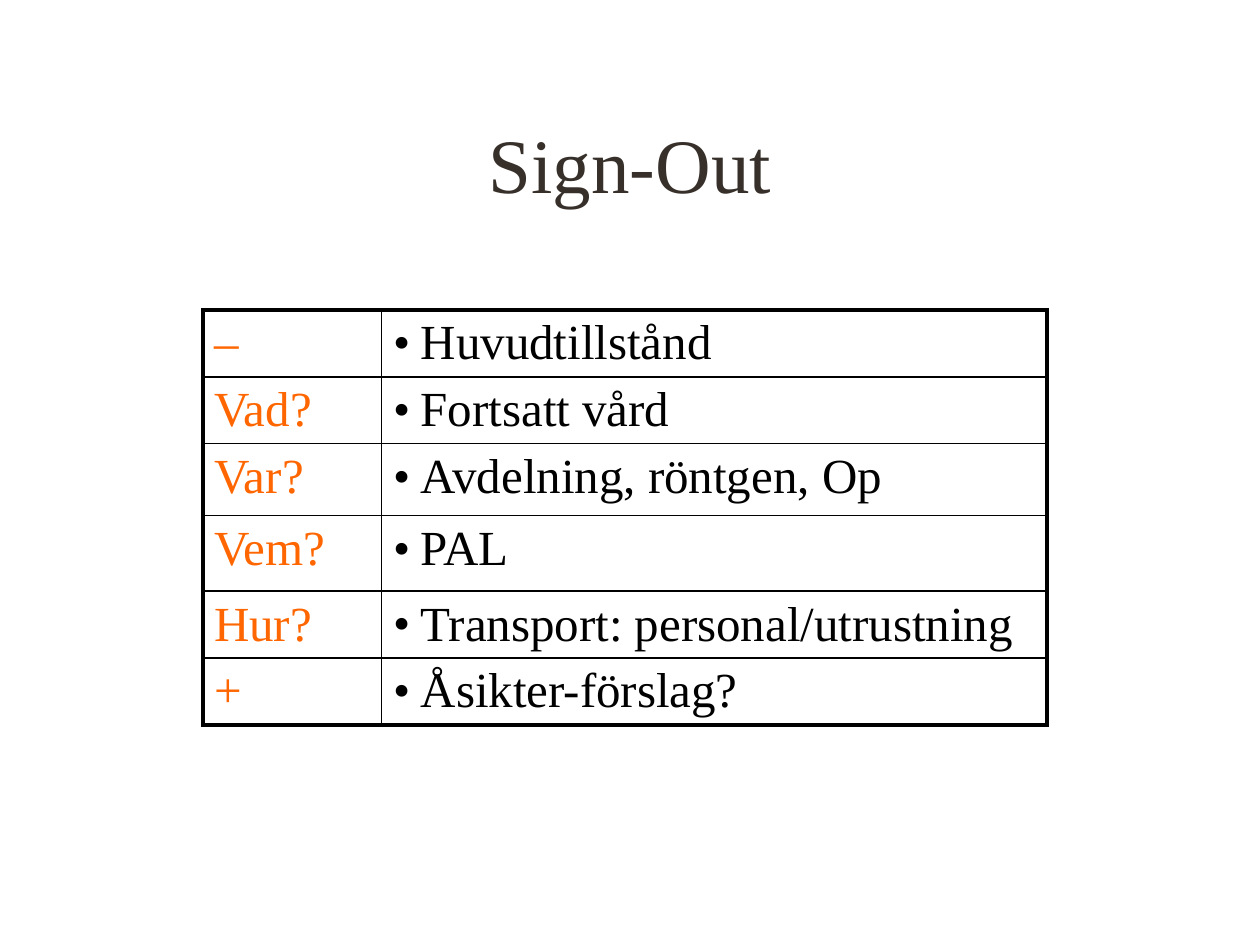
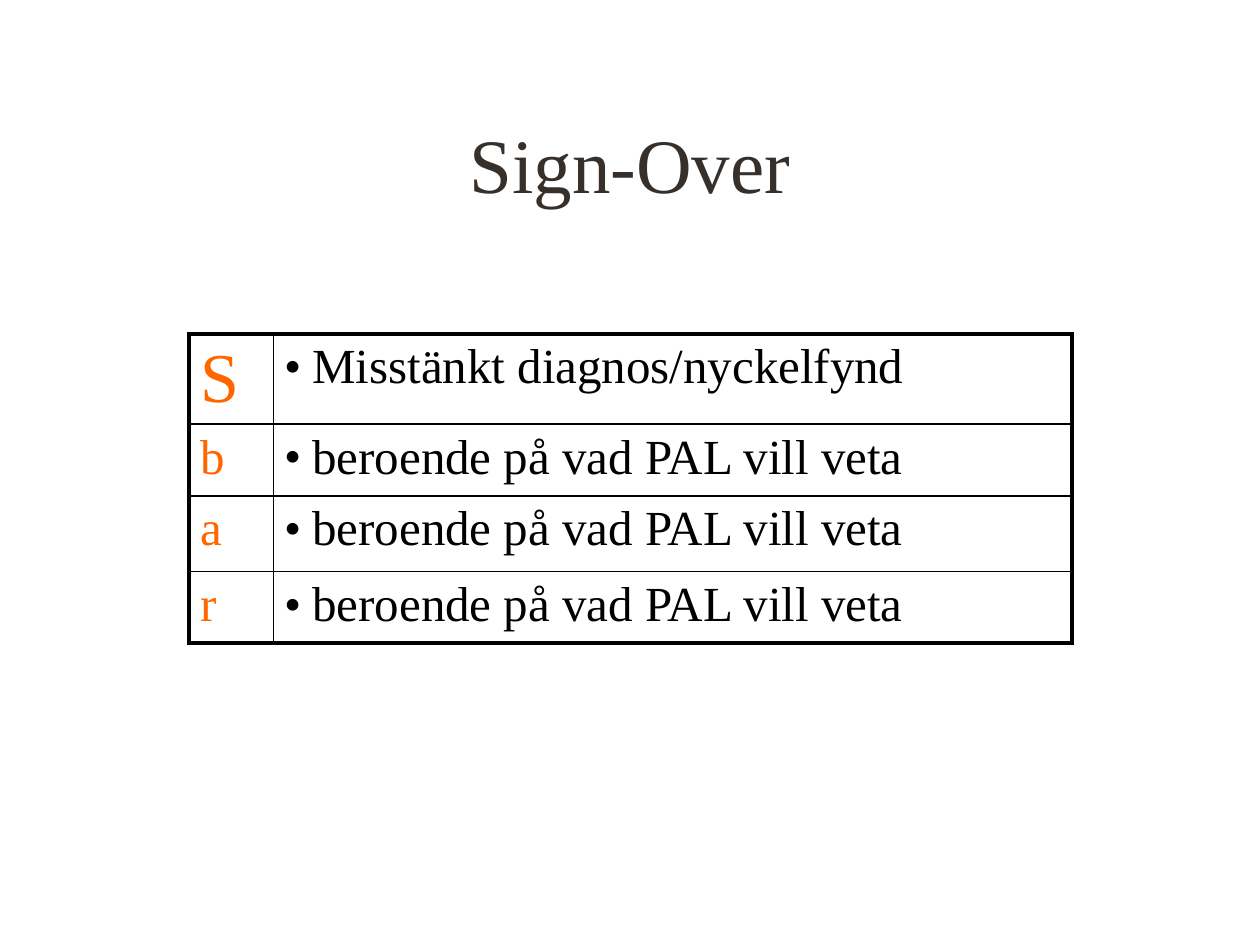
"""Build the Sign-Out and Sign-Over slides, each a title and a two-column table."""
import pptx
import pptx.dml.color
import pptx.enum.text
import pptx.oxml
import pptx.oxml.ns
import pptx.util
from lxml import etree

Inches = pptx.util.Inches
Pt = pptx.util.Pt
FONT = "Times New Roman"
BROWN, ORANGE, BLACK = "37302A", "FF6600", "000000"
THIN, THICK = 1, 2.25
INDENT = Inches(0.22)


def write(para, text, size, color):
    """Add one formatted run to a paragraph."""
    run = para.add_run()
    run.text = text
    run.font.name = FONT
    run.font.size = Pt(size)
    run.font.color.rgb = pptx.dml.color.RGBColor.from_string(color)


def add(parent, tag, **attrs):
    """Append a drawing element and return it."""
    node = etree.SubElement(parent, pptx.oxml.ns.qn(tag))
    for name, value in attrs.items():
        node.set(name, str(value))
    return node


pages = [
    {
        "title": "Sign-Out", "left": 1.61, "top": 2.46, "cols": [1.42, 5.28],
        "rows": [
            ("–", "Huvudtillstånd", 0.53, 28),
            ("Vad?", "Fortsatt vård", 0.53, 28),
            ("Var?", "Avdelning, röntgen, Op", 0.57, 28),
            ("Vem?", "PAL", 0.6, 28),
            ("Hur?", "Transport: personal/utrustning", 0.53, 28),
            ("+", "Åsikter-förslag?", 0.53, 28),
        ],
    },
    {
        "title": "Sign-Over", "left": 1.5, "top": 2.65, "cols": [0.67, 6.34],
        "rows": [
            ("S", "Misstänkt diagnos/nyckelfynd", 0.71, 40),
            ("b", "beroende på vad PAL vill veta", 0.57, 28),
            ("a", "beroende på vad PAL vill veta", 0.6, 28),
            ("r", "beroende på vad PAL vill veta", 0.57, 28),
        ],
    },
]

deck = pptx.Presentation()
deck.slide_width, deck.slide_height = Inches(10), Inches(7.5)

for page in pages:
    slide = deck.slides.add_slide(deck.slide_layouts[5])
    title = slide.shapes.title
    title.left, title.top = Inches(0.75), Inches(0.67)
    title.width, title.height = Inches(8.5), Inches(1.25)
    title.text_frame.vertical_anchor = pptx.enum.text.MSO_ANCHOR.MIDDLE
    para = title.text_frame.paragraphs[0]
    para.alignment = pptx.enum.text.PP_ALIGN.CENTER
    write(para, page["title"], 44, BROWN)

    rows, cols = page["rows"], page["cols"]
    height = sum(row[2] for row in rows)
    frame = slide.shapes.add_table(
        len(rows), len(cols), Inches(page["left"]), Inches(page["top"]),
        Inches(sum(cols)), Inches(height))
    table = frame.table
    table.first_row = table.horz_banding = False
    for col, width in zip(table.columns, cols):
        col.width = Inches(width)

    for i, (label, topic, tall, size) in enumerate(rows):
        table.rows[i].height = Inches(tall)
        first, last = i == 0, i == len(rows) - 1

        for j in range(len(cols)):
            cell = table.cell(i, j)
            cell.margin_left = cell.margin_right = Inches(0.09)
            cell.margin_top = cell.margin_bottom = Inches(0.05)
            outer = {"L": j == 0, "R": j == 1, "T": first, "B": last}
            props = cell._tc.get_or_add_tcPr()
            for side, edge in outer.items():
                line = add(props, "a:ln" + side, w=Pt(THICK if edge else THIN))
                add(add(line, "a:solidFill"), "a:srgbClr", val=BLACK)
            cell.fill.background()

        write(table.cell(i, 0).text_frame.paragraphs[0], label, size, ORANGE)
        para = table.cell(i, 1).text_frame.paragraphs[0]
        props = para._p.get_or_add_pPr()
        props.set("marL", str(INDENT))
        props.set("indent", str(-INDENT))
        add(props, "a:buFont", typeface=FONT)
        add(props, "a:buChar", char="•")
        write(para, topic, 28, BLACK)

deck.save("out.pptx")
